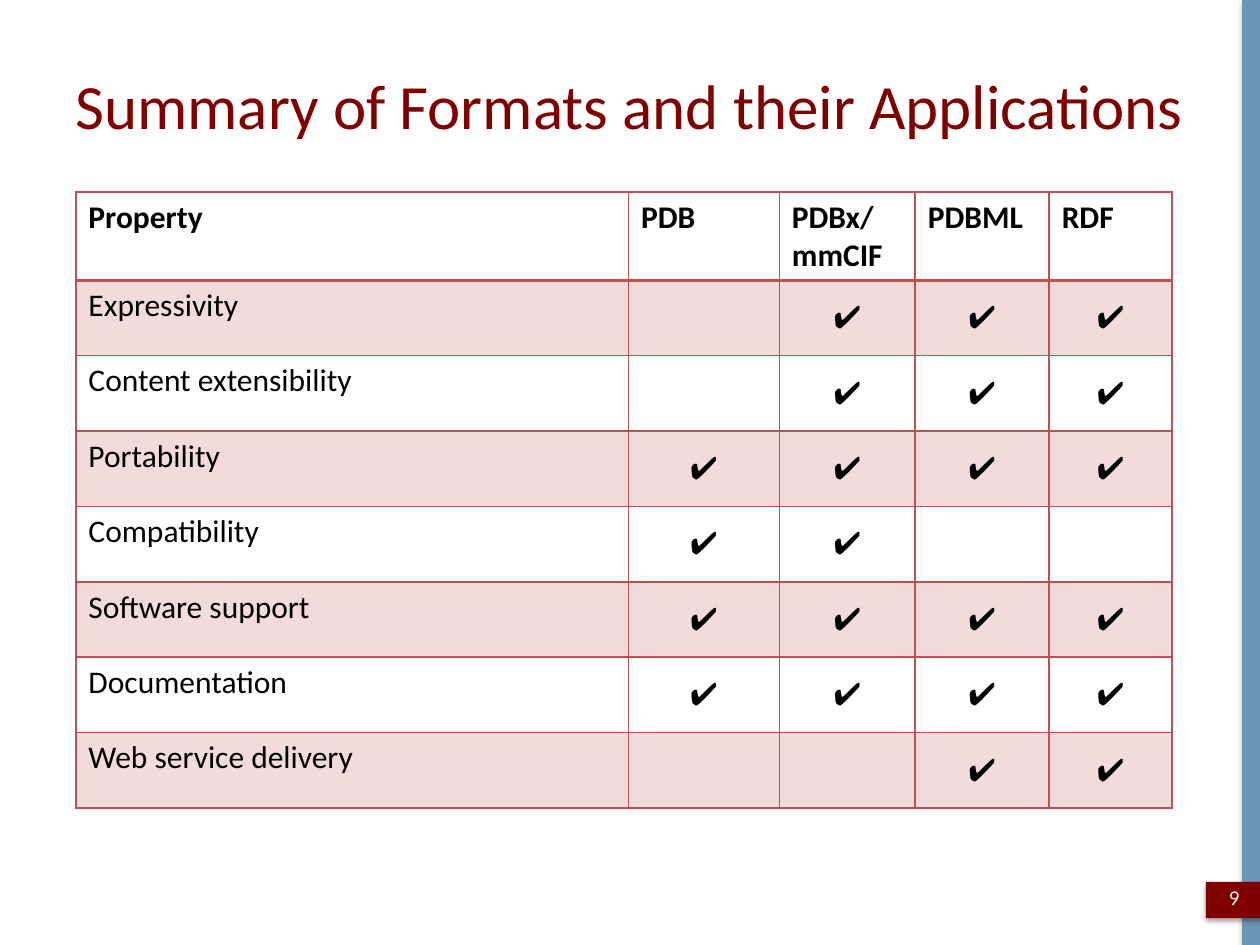
from lxml.etree import SubElement
from pptx import Presentation
from pptx.dml.color import RGBColor
from pptx.enum.shapes import MSO_SHAPE
from pptx.enum.text import MSO_ANCHOR, PP_ALIGN
from pptx.oxml.ns import qn
from pptx.util import Cm, Pt

HUES = {"bar": "6C95B6", "dark": "800000", "rule": "C0504D",
        "ink": "000000", "white": "FFFFFF"}


def write(frame, text, size, hue, bold=False, align=PP_ALIGN.LEFT):
    para = frame.paragraphs[0]
    para.alignment = align
    run = para.add_run()
    run.text = text
    run.font.name = "Calibri"
    run.font.size = Pt(size)
    run.font.bold = bold
    run.font.color.rgb = RGBColor.from_string(HUES[hue])


def tint(node, hue, alpha):
    color = SubElement(node, qn("a:srgbClr"), val=HUES[hue])
    SubElement(color, qn("a:alpha"), val=str(alpha * 1000))


deck = Presentation()
deck.slide_width, deck.slide_height = Cm(25.4), Cm(19.05)
slide = deck.slides.add_slide(deck.slide_layouts[6])

# Side bar and number plate, both with a soft shadow below
for left, top, width, height, hue in [(25.04, 0, 0.36, 19.05, "bar"),
                                      (24.31, 17.78, 1.22, 0.73, "dark")]:
    rect = slide.shapes.add_shape(MSO_SHAPE.RECTANGLE, Cm(left), Cm(top),
                                  Cm(width), Cm(height))
    rect.fill.solid()
    rect.fill.fore_color.rgb = RGBColor.from_string(HUES[hue])
    rect.line.fill.background()
    rect.shadow.inherit = False
    glow = SubElement(rect.element.spPr.find(qn("a:effectLst")),
                      qn("a:outerShdw"), blurRad=str(Pt(3.1)),
                      dist=str(Pt(1.8)), dir="5400000", rotWithShape="0")
    tint(glow, "ink", 35)

# Title and slide number
for left, top, width, height, text, size, hue, align in [
        (1.27, 0.76, 23.6, 2.67, "Summary of Formats and their Applications",
         36, "dark", PP_ALIGN.LEFT),
        (24.31, 17.58, 1.14, 1.02, "9", 12, "white", PP_ALIGN.CENTER)]:
    box = slide.shapes.add_textbox(Cm(left), Cm(top), Cm(width), Cm(height))
    box.text_frame.word_wrap = True
    box.text_frame.vertical_anchor = MSO_ANCHOR.MIDDLE
    write(box.text_frame, text, size, hue, align=align)

# Table: 1 marks a format that has the property
heads = ["Property", "PDB", "PDBx/mmCIF", "PDBML", "RDF"]
marks = {
    "Expressivity": (0, 1, 1, 1),
    "Content extensibility": (0, 1, 1, 1),
    "Portability": (1, 1, 1, 1),
    "Compatibility": (1, 1, 0, 0),
    "Software support": (1, 1, 1, 1),
    "Documentation": (1, 1, 1, 1),
    "Web service delivery": (0, 0, 1, 1),
}
rows = [heads] + [[name] + ["✔" if on else "" for on in flags]
                  for name, flags in marks.items()]
widths = [11.14, 3.04, 2.74, 2.7, 2.48]
high = 1.52
grid = slide.shapes.add_table(len(rows), len(heads), Cm(1.53), Cm(3.87),
                              Cm(sum(widths)), Cm(high * len(rows))).table
grid.first_row = grid.horz_banding = False
for col, width in zip(grid.columns, widths):
    col.width = Cm(width)

for r, row in enumerate(rows):
    grid.rows[r].height = Cm(high)
    for c, text in enumerate(row):
        cell = grid.cell(r, c)
        mark = r > 0 and c > 0
        if mark:
            cell.vertical_anchor = MSO_ANCHOR.MIDDLE
        if text:
            write(cell.text_frame, text, 18, "ink", bold=r == 0,
                  align=PP_ALIGN.CENTER if mark else PP_ALIGN.LEFT)

        # Borders, with a thicker rule under the header
        props = cell._tc.get_or_add_tcPr()
        for side in "LRTB":
            thick = (r, side) in [(0, "B"), (1, "T")]
            line = SubElement(props, qn("a:ln" + side),
                              w=str(Pt(2 if thick else 1)))
            tint(SubElement(line, qn("a:solidFill")), "rule", 100)

        # Pale band on odd rows
        if r % 2:
            tint(SubElement(props, qn("a:solidFill")), "rule", 20)
        else:
            cell.fill.background()

deck.save("out.pptx")
